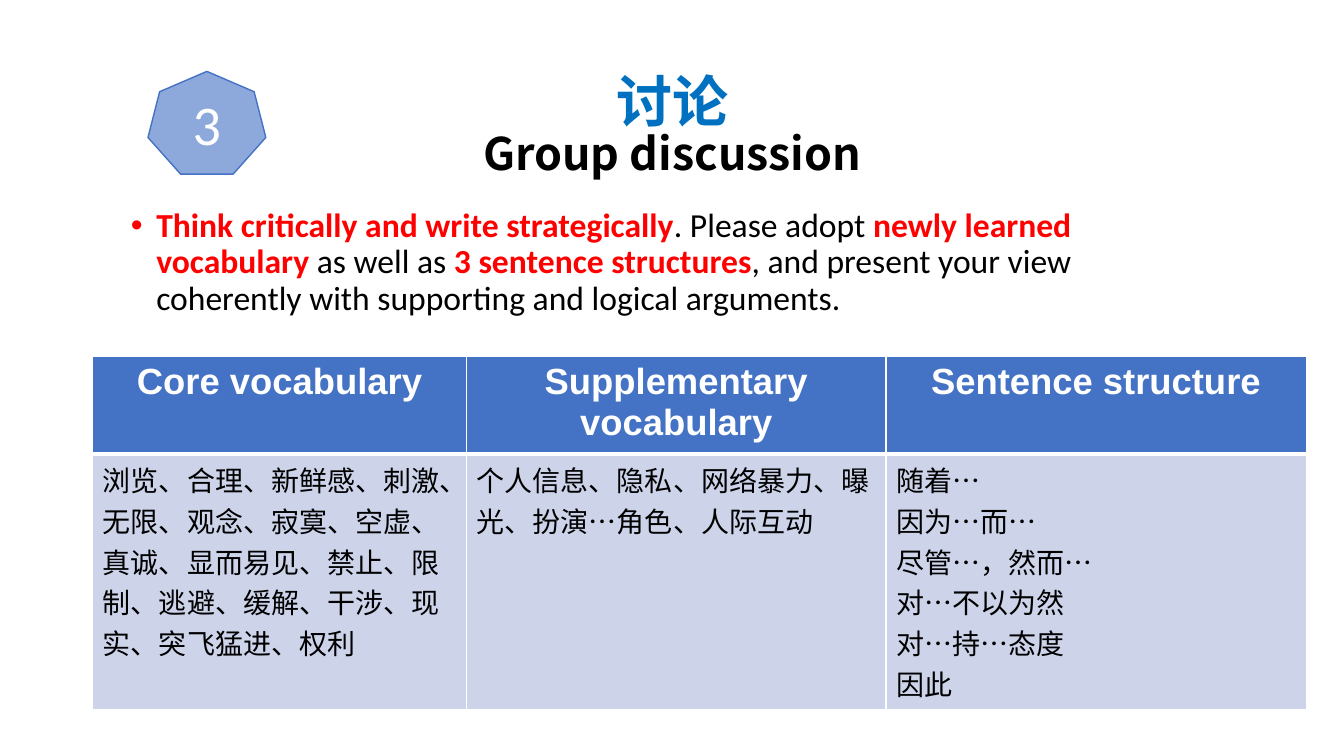
from dataclasses import dataclass

from lxml import etree
from pptx import Presentation
from pptx import util as u
from pptx.dml.color import RGBColor
from pptx.enum import shapes, text
from pptx.oxml import ns


@dataclass(frozen=True)
class Theme:
    white: str = "FFFFFF"
    black: str = "000000"
    red: str = "FF0000"
    title_blue: str = "0070C0"
    header_blue: str = "4472C4"
    cell_blue: str = "CDD4EA"
    badge_blue: str = "8DA9DB"
    latin: str = "Calibri"
    heading: str = "Arial"
    chinese: str = "Noto Sans CJK SC"
    title_size: int = 40
    subtitle_size: int = 32
    body_size: int = 24
    header_size: int = 26
    cell_size: int = 20


T = Theme()
CENTER = text.PP_ALIGN.CENTER
LEFT = text.PP_ALIGN.LEFT

VOCABULARY = [
    ("Core vocabulary", [
        "浏览、合理、新鲜感、刺激、无限、观念、寂寞、空虚、真诚、显而易见、"
        "禁止、限制、逃避、缓解、干涉、现实、突飞猛进、权利"]),
    ("Supplementary vocabulary", [
        "个人信息、隐私、网络暴力、曝光、扮演…角色、人际互动"]),
    ("Sentence structure", [
        "随着…", "因为…而…", "尽管…，然而…", "对…不以为然", "对…持…态度", "因此"]),
]

TASK = [
    ("Think critically and write strategically", True),
    (". Please adopt ", False),
    ("newly learned vocabulary", True),
    (" as well as ", False),
    ("3 sentence structures", True),
    (", and present your view coherently with supporting and logical arguments.", False),
]


def rgb(color):
    return RGBColor.from_string(color)


def add_run(p, words, size, font, color, bold=False):
    r = p.add_run()
    r.text = words
    r.font.size = u.Pt(size)
    r.font.name = font
    r.font.bold = bold
    r.font.color.rgb = rgb(color)
    if font == T.chinese:
        r.font.language_id = None
        ea = etree.SubElement(r.font._element, ns.qn("a:ea"))
        ea.set("typeface", font)


def add_text_frame(s, left, top, width, height, anchor):
    tf = s.shapes.add_textbox(u.Cm(left), u.Cm(top), u.Cm(width), u.Cm(height)).text_frame
    tf.word_wrap = True
    tf.vertical_anchor = anchor
    return tf


def add_title(s):
    tf = add_text_frame(s, 2.34, 0.97, 29.21, 3.68, text.MSO_ANCHOR.BOTTOM)
    p = tf.paragraphs[0]
    p.alignment = CENTER
    p.line_spacing = 0.85
    add_run(p, "讨论", T.title_size, T.chinese, T.title_blue, True)
    p.add_line_break()
    add_run(p, "Group discussion", T.subtitle_size, T.chinese, T.black, True)


def set_bullet(p, color, indent):
    pPr = p._p.get_or_add_pPr()
    pPr.set("marL", str(indent))
    pPr.set("indent", str(-indent))
    clr = etree.SubElement(pPr, ns.qn("a:buClr"))
    etree.SubElement(clr, ns.qn("a:srgbClr")).set("val", color)
    etree.SubElement(pPr, ns.qn("a:buFont")).set("typeface", T.heading)
    etree.SubElement(pPr, ns.qn("a:buChar")).set("char", "•")


def add_task(s):
    tf = add_text_frame(s, 3.05, 5.13, 27.94, 3.5, text.MSO_ANCHOR.TOP)
    p = tf.paragraphs[0]
    p.line_spacing = 0.9
    set_bullet(p, T.red, u.Cm(0.64))
    for words, key in TASK:
        add_run(p, words, T.body_size, T.latin, T.red if key else T.black, key)


def set_borders(cell, **widths):
    tcPr = cell._tc.get_or_add_tcPr()
    for side in "LRTB":
        ln = etree.SubElement(tcPr, ns.qn("a:ln" + side))
        ln.set("w", str(u.Pt(widths.get(side, 1))))
        fill = etree.SubElement(ln, ns.qn("a:solidFill"))
        etree.SubElement(fill, ns.qn("a:srgbClr")).set("val", T.white)


def fill_cell(cell, lines, fill, align, **style):
    cell.fill.solid()
    cell.fill.fore_color.rgb = rgb(fill)
    tf = cell.text_frame
    for i, line in enumerate(lines):
        p = tf.add_paragraph() if i else tf.paragraphs[0]
        p.alignment = align
        add_run(p, line, **style)


def add_vocabulary_table(s):
    widths, heights = (9.42, 10.57, 10.59), (2.28, 6.43)
    frame = s.shapes.add_table(2, 3, u.Cm(2.34), u.Cm(8.99),
                               u.Cm(sum(widths)), u.Cm(sum(heights)))
    table = frame.table
    table.horz_banding = False
    for row, height in zip(table.rows, heights):
        row.height = u.Cm(height)
    for i, (heading, lines) in enumerate(VOCABULARY):
        table.columns[i].width = u.Cm(widths[i])
        head, body = table.cell(0, i), table.cell(1, i)
        set_borders(head, B=3)
        set_borders(body, T=3)
        fill_cell(head, [heading], T.header_blue, CENTER, size=T.header_size,
                  font=T.heading, color=T.white, bold=True)
        fill_cell(body, lines, T.cell_blue, LEFT, size=T.cell_size,
                  font=T.chinese, color=T.black)


def add_badge(s, number):
    sp = s.shapes.add_shape(shapes.MSO_SHAPE.HEPTAGON,
                            u.Cm(3.73), u.Cm(1.8), u.Cm(2.97), u.Cm(2.59))
    sp.shadow.inherit = False
    sp.fill.solid()
    sp.fill.fore_color.rgb = rgb(T.badge_blue)
    sp.line.color.rgb = rgb(T.header_blue)
    sp.line.width = u.Pt(1)
    tf = sp.text_frame
    tf.vertical_anchor = text.MSO_ANCHOR.MIDDLE
    p = tf.paragraphs[0]
    p.alignment = CENTER
    add_run(p, number, T.title_size, T.latin, T.white)


def main():
    prs = Presentation()
    prs.slide_width, prs.slide_height = u.Cm(33.87), u.Cm(19.05)
    s = prs.slides.add_slide(prs.slide_layouts[6])
    add_title(s)
    add_task(s)
    add_vocabulary_table(s)
    add_badge(s, "3")
    prs.save("out.pptx")


if __name__ == "__main__":
    main()
